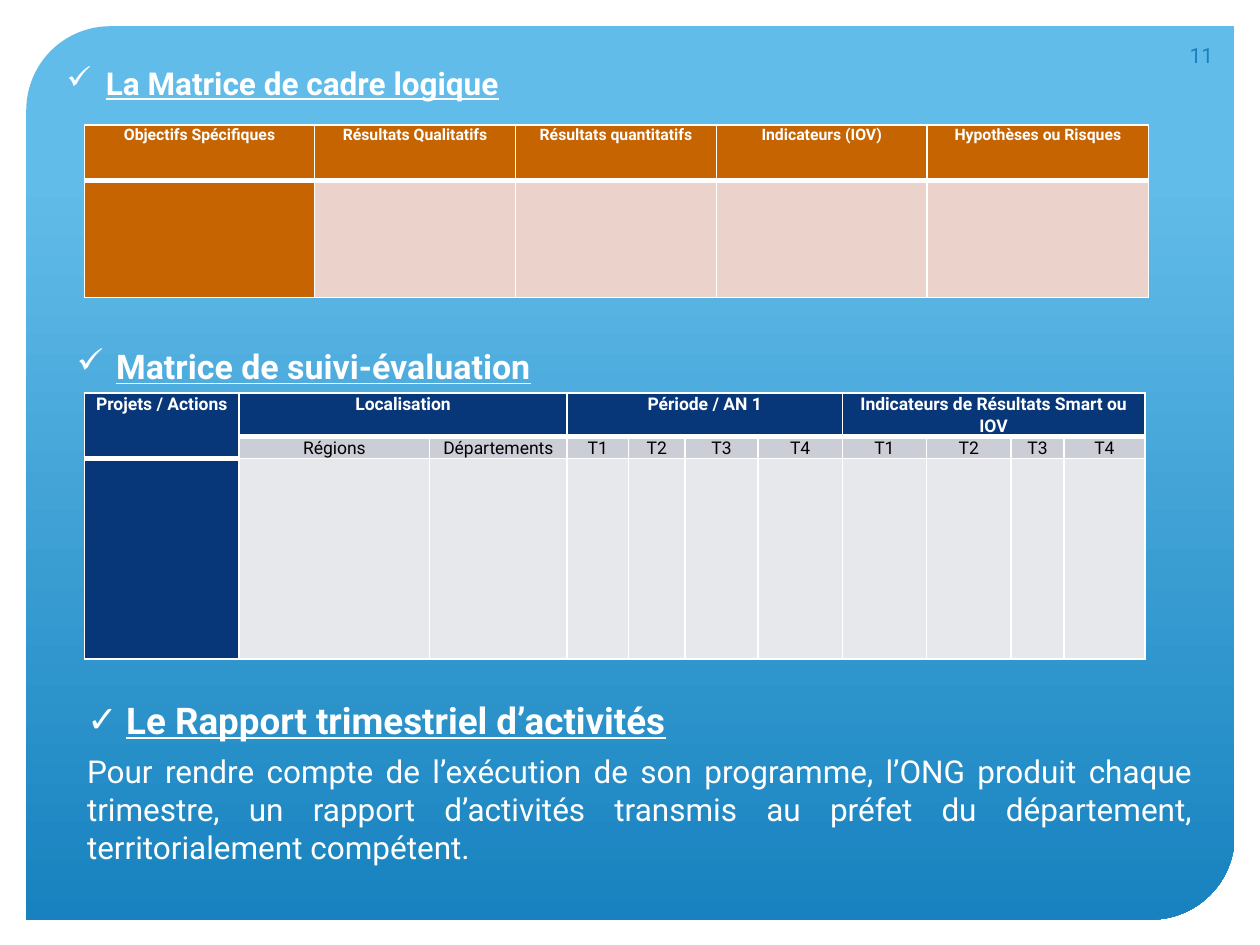
from lxml.etree import SubElement
from pptx import Presentation
from pptx.dml.color import RGBColor
from pptx.enum.shapes import MSO_SHAPE as Shape
from pptx.enum.text import MSO_ANCHOR as Anchor, MSO_AUTO_SIZE as Fit, PP_ALIGN as Align
from pptx.oxml import parse_xml
from pptx.oxml.ns import nsdecls, qn
from pptx.util import Cm, Pt

WHITE = RGBColor(0xFF, 0xFF, 0xFF)
BLACK = RGBColor(0, 0, 0)
SKY = RGBColor(0x62, 0xBC, 0xE9)
BLUE = RGBColor(0x17, 0x82, 0xBF)
NAVY = RGBColor(0x07, 0x37, 0x79)
GREY = RGBColor(0xCC, 0xCE, 0xD7)
PALE = RGBColor(0xE7, 0xE8, 0xEC)
RUST = RGBColor(0xC7, 0x64, 0x02)
PINK = RGBColor(0xEB, 0xD3, 0xCC)

LOGIC = "La Matrice de cadre logique"
TRACK = "Matrice de suivi-évaluation"
REPORT = "Le Rapport trimestriel d’activités"
BODY = ("Pour rendre compte de l’exécution de son programme, l’ONG produit chaque "
        "trimestre, un rapport d’activités transmis au préfet du département, "
        "territorialement compétent.")
TERMS = ["T1", "T2", "T3", "T4"]

# Spans are (row, column, last row, last column); lengths are in cm.
TABLES = [
    dict(
        at=(1.7, 2.52), size=9, inset=0.15, head=RUST, tints=[PINK],
        cols=[4.64, 4.05, 4.05, 4.25, 4.46], rows=[1.12, 2.36], spans=[],
        text=[["Objectifs Spécifiques", "Résultats Qualitatifs", "Résultats quantitatifs",
               "Indicateurs (IOV)", "Hypothèses ou Risques"]],
    ),
    dict(
        at=(1.7, 7.92), size=10, inset=0.18, head=NAVY, tints=[GREY, PALE],
        cols=[3.12, 3.84, 2.77, 1.24, 1.14, 1.47, 1.7, 1.7, 1.7, 1.07, 1.63],
        rows=[0.87, 0.44, 4.05],
        spans=[(0, 0, 1, 0), (0, 1, 0, 2), (0, 3, 0, 6), (0, 7, 0, 10)],
        text=[["Projets / Actions", "Localisation", "", "Période / AN 1", "", "", "",
               "Indicateurs de Résultats Smart ou IOV", "", "", ""],
              ["", "Régions", "Départements", *TERMS, *TERMS]],
    ),
]


def style(item, **values):
    for name, value in values.items():
        setattr(item, name, value)


def write(para, text, size, color=WHITE, **more):
    run = para.add_run()
    run.text = text
    style(run.font, name="Roboto", size=Pt(size), **more)
    run.font.color.rgb = color


def place(box, left, top, width, height, anchor=Anchor.TOP):
    style(box, left=Cm(left), top=Cm(top), width=Cm(width), height=Cm(height))
    frame = box.text_frame
    style(frame, word_wrap=True, auto_size=Fit.NONE, vertical_anchor=anchor)
    return frame.paragraphs[0]


def head(para, text, size):
    """Write an underlined heading with a tick bullet."""
    props = para._p.get_or_add_pPr()
    props.set("marL", str(Cm(0.79)))
    props.set("indent", str(-Cm(0.79)))
    SubElement(props, qn("a:buChar")).set("char", "✓")
    para.alignment = Align.LEFT
    write(para, text, size, bold=True, underline=True)


def border(cell, top, bottom):
    props = cell._tc.get_or_add_tcPr()
    for spot, (side, width) in enumerate(zip("LRTB", (1, 1, top, bottom))):
        line = parse_xml(
            f'<a:ln{side} {nsdecls("a")} w="{Pt(width)}"><a:solidFill>'
            f'<a:srgbClr val="{WHITE}"/></a:solidFill></a:ln{side}>')
        props.insert(spot, line)


def grid(slide, data):
    cols, rows, spans = data["cols"], data["rows"], data["spans"]
    left, top = data["at"]
    table = slide.shapes.add_table(
        len(rows), len(cols), Cm(left), Cm(top), Cm(sum(cols)), Cm(sum(rows))).table
    for col, width in zip(table.columns, cols):
        col.width = Cm(width)
    for row, height in zip(table.rows, rows):
        row.height = Cm(height)
    tall = {c: last for _, c, last, _ in spans}
    fills = [data["head"], *data["tints"]]
    for r in range(len(rows)):
        for c in range(len(cols)):
            cell = table.cell(r, c)
            title = r <= tall.get(c, 0)
            style(cell, margin_left=Cm(data["inset"]), margin_right=Cm(data["inset"]),
                  margin_top=0, margin_bottom=0)
            cell.fill.solid()
            cell.fill.fore_color.rgb = data["head"] if title or c == 0 else fills[r]
            under = r == tall.get(c, 0) + 1
            border(cell, 3 if under else 1, 3 if title else 1)
            para = cell.text_frame.paragraphs[0]
            style(para, alignment=Align.CENTER, line_spacing=1.07, space_after=Pt(8))
            text = data["text"][r][c] if r < len(data["text"]) else ""
            if text:
                write(para, text, data["size"], WHITE if title else BLACK, bold=title)
            else:
                end = SubElement(para._p, qn("a:endParaRPr"))
                end.set("sz", str(data["size"] * 100))
    for r, c, down, right in spans:
        table.cell(r, c).merge(table.cell(down, right))


def panel(slide):
    shape = slide.shapes.add_shape(
        Shape.ROUND_2_DIAG_RECTANGLE, Cm(0.53), Cm(0.53), Cm(24.36), Cm(18.01 + 0.53 - 0.53))
    shape.adjustments[0] = 0.094
    shape.adjustments[1] = 0
    shape.shadow.inherit = False
    shape.line.fill.background()
    shape.fill.gradient()
    shape.fill.gradient_angle = 270
    for stop, color, spot in zip(shape.fill.gradient_stops, (SKY, BLUE), (0.17, 1)):
        stop.color.rgb = color
        stop.position = spot
    slide.shapes._spTree.insert(2, shape._element)


def main():
    deck = Presentation()
    style(deck, slide_width=Cm(25.4), slide_height=Cm(19.05))
    slide = deck.slides.add_slide(deck.slide_layouts[0])
    panel(slide)

    head(place(slide.shapes.title, 1.09, 1.14, 23.2, 1.07, Anchor.MIDDLE), LOGIC, 18)

    body = slide.placeholders[1]
    head(place(body, 1.5, 13.94, 22.8, 4.2), REPORT, 21)
    body.text_frame.paragraphs[0].space_before = Pt(0)
    para = body.text_frame.add_paragraph()
    style(para, alignment=Align.JUSTIFY, space_before=Pt(6))
    write(para, BODY, 18)

    for data in TABLES:
        grid(slide, data)

    box = slide.shapes.add_textbox(0, 0, 0, 0)
    head(place(box, 1.3, 6.85, 21.6, 1.07, Anchor.MIDDLE), TRACK, 19.4)

    number = place(slide.shapes.add_textbox(0, 0, 0, 0), 23.34, 0.61, 1.37, 1.02, Anchor.MIDDLE)
    number.alignment = Align.RIGHT
    write(number, "11", 12, BLUE)

    deck.save("out.pptx")


if __name__ == "__main__":
    main()
